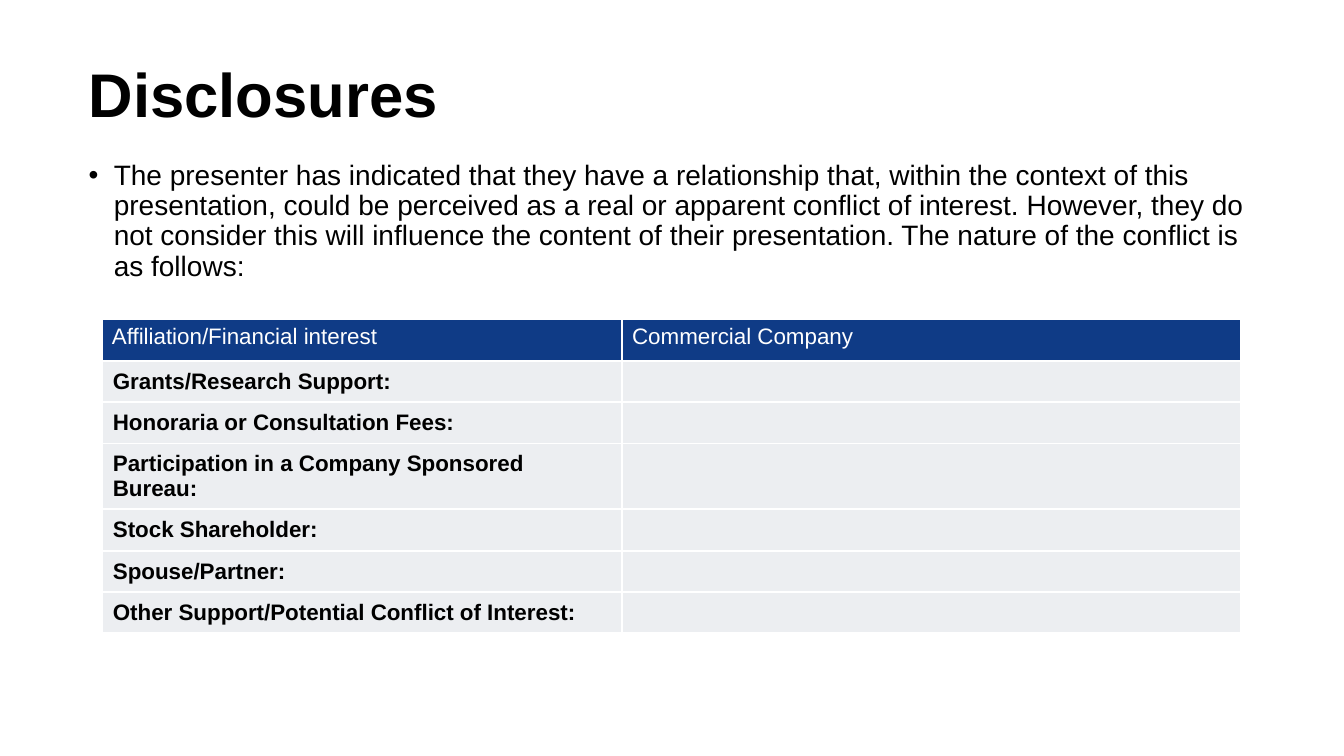
"""Build the Disclosures slide with its conflict-of-interest table."""
from lxml import etree
from pptx import Presentation
from pptx.dml.color import RGBColor
from pptx.enum.text import MSO_ANCHOR
from pptx.oxml.ns import qn
from pptx.util import Inches, Pt

MIDDLE, TOP = MSO_ANCHOR.MIDDLE, MSO_ANCHOR.TOP
FONT = "Arial"
COLOURS = {"ink": "000000", "paper": "FFFFFF", "header": "0F3B86", "row": "ECEEF1"}

TITLE = "Disclosures"
INTRO = (
    "The presenter has indicated that they have a relationship that, within the context "
    "of this presentation, could be perceived as a real or apparent conflict of interest. "
    "However, they do not consider this will influence the content of their presentation. "
    "The nature of the conflict is as follows:"
)
HEADINGS = ("Affiliation/Financial interest", "Commercial Company")
INTERESTS = (
    "Grants/Research Support:",
    "Honoraria or Consultation Fees:",
    "Participation in a Company Sponsored Bureau:",
    "Stock Shareholder:",
    "Spouse/Partner:",
    "Other Support/Potential Conflict of Interest:",
)
ROWS = [HEADINGS] + [(interest, "") for interest in INTERESTS]

SLIDE_SIZE = (13.33, 7.5)
TEXT_LEFT, TEXT_WIDTH = 0.78, 11.75
TABLE_LEFT, TABLE_TOP = 1.01, 3.17
COLUMN_WIDTHS = (5.16, 6.14)
ROW_HEIGHT = 0.41
BULLET_INDENT = 0.25
BORDER_WIDTH = 1.5


def style(para, size, colour, bold=False):
    para.font.name = FONT
    para.font.size = Pt(size)
    para.font.bold = bold
    para.font.color.rgb = RGBColor.from_string(COLOURS[colour])


def add_text(page, text, top, height, anchor):
    box = page.shapes.add_textbox(
        Inches(TEXT_LEFT), Inches(top), Inches(TEXT_WIDTH), Inches(height))
    frame = box.text_frame
    frame.word_wrap = True
    frame.vertical_anchor = anchor
    para = frame.paragraphs[0]
    para.text = text
    para.line_spacing = 0.9
    return para


def add_bullet(para):
    properties = para._p.get_or_add_pPr()
    indent = Inches(BULLET_INDENT)
    properties.set("marL", str(indent))
    properties.set("indent", str(-indent))
    etree.SubElement(properties, qn("a:buFont"), typeface=FONT)
    etree.SubElement(properties, qn("a:buChar"), char="•")


def add_borders(cell):
    properties = cell._tc.get_or_add_tcPr()
    for side in ("lnL", "lnR", "lnT", "lnB"):
        line = etree.SubElement(properties, qn(f"a:{side}"), w=str(Pt(BORDER_WIDTH)))
        fill = etree.SubElement(line, qn("a:solidFill"))
        etree.SubElement(fill, qn("a:srgbClr"), val=COLOURS["paper"])


def fill_cell(cell, text, is_header):
    add_borders(cell)
    cell.fill.solid()
    cell.fill.fore_color.rgb = RGBColor.from_string(COLOURS["header" if is_header else "row"])
    if not is_header:
        cell.vertical_anchor = MIDDLE
        cell.margin_left = cell.margin_right = Inches(0.11)
        cell.margin_top = cell.margin_bottom = Inches(0.06)
    para = cell.text_frame.paragraphs[0]
    if text:
        para.text = text
    style(para, 16, "paper" if is_header else "ink", bold=not is_header)


def add_interest_table(page):
    table = page.shapes.add_table(
        len(ROWS), len(COLUMN_WIDTHS), Inches(TABLE_LEFT), Inches(TABLE_TOP),
        Inches(sum(COLUMN_WIDTHS)), Inches(ROW_HEIGHT * len(ROWS))).table
    for column, width in zip(table.columns, COLUMN_WIDTHS):
        column.width = Inches(width)
    for row_index, texts in enumerate(ROWS):
        table.rows[row_index].height = Inches(ROW_HEIGHT)
        for column_index, text in enumerate(texts):
            fill_cell(table.cell(row_index, column_index), text, row_index == 0)


def main():
    deck = Presentation()
    deck.slide_width, deck.slide_height = (Inches(length) for length in SLIDE_SIZE)
    page = deck.slides.add_slide(deck.slide_layouts[6])
    style(add_text(page, TITLE, 0.58, 0.77, MIDDLE), 44, "ink", bold=True)
    intro = add_text(page, INTRO, 1.55, 1.42, TOP)
    add_bullet(intro)
    style(intro, 20, "ink")
    add_interest_table(page)
    deck.save("out.pptx")


if __name__ == "__main__":
    main()
